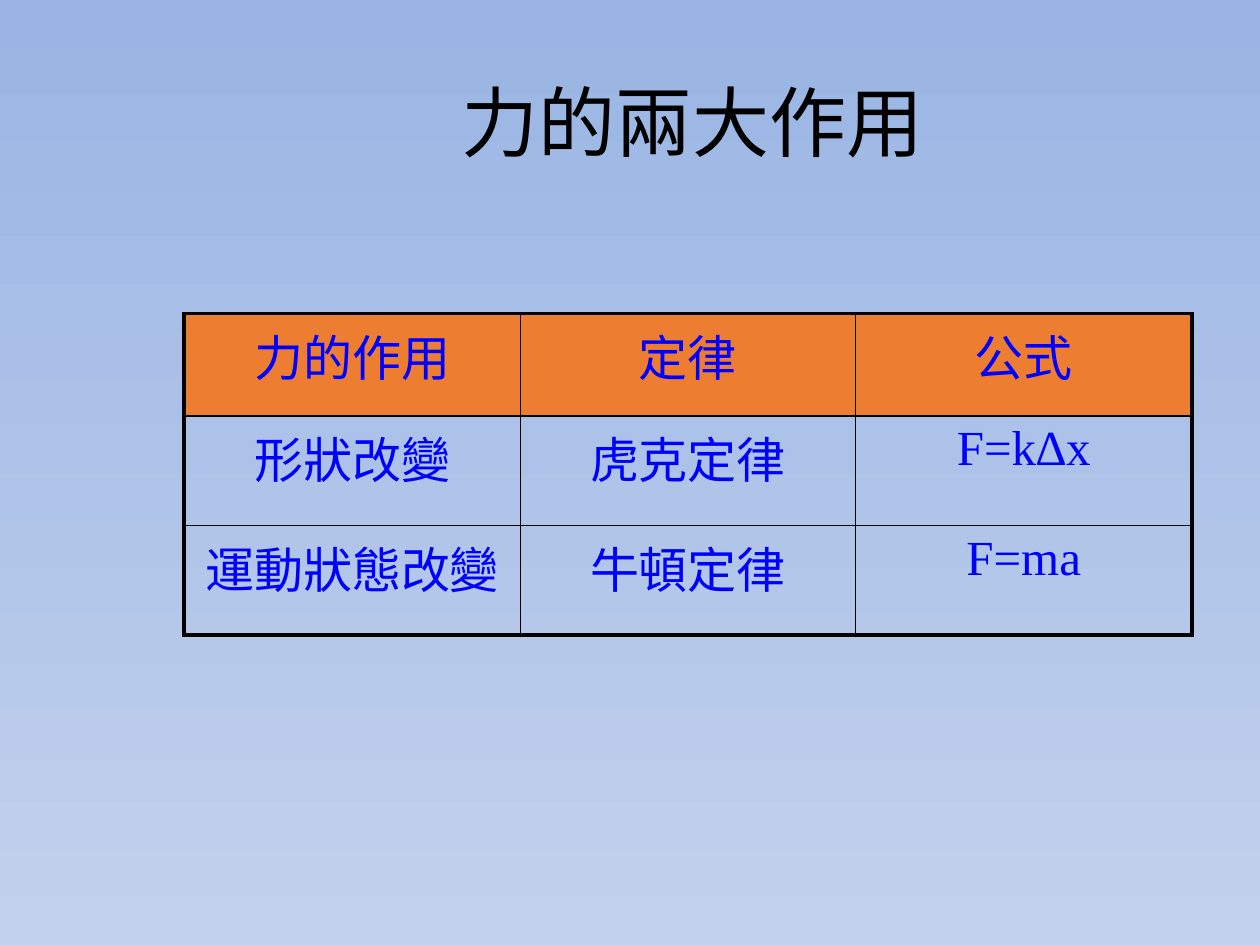
from pptx import Presentation
from pptx import util as u
from pptx.dml.color import RGBColor
from pptx.enum import text
from pptx.oxml.ns import qn
from lxml import etree

COLORS = {"top": "9AB5E4", "base": "C2D1ED", "ink": "000000",
          "word": "0000FF", "head": "ED7D31"}
ROWS = [["力的作用", "定律", "公式"],
        ["形狀改變", "虎克定律", "F=k∆x"],
        ["運動狀態改變", "牛頓定律", "F=ma"]]


def rgb(name):
    return RGBColor.from_string(COLORS[name])


class Deck:
    latin, asian = "Times New Roman", "Noto Sans CJK SC"
    thin, thick = 1, 2.25

    def __init__(self):
        self.prs = Presentation()
        self.prs.slide_width, self.prs.slide_height = u.Inches(10), u.Inches(7.5)
        self.slide = self.prs.slides.add_slide(self.prs.slide_layouts[5])

    def back(self):
        fill = self.slide.background.fill
        fill.gradient()
        fill.gradient_angle = 270
        for stop, name in zip(fill.gradient_stops, ("top", "base")):
            stop.color.rgb = rgb(name)

    def style(self, frame, size, color, latin):
        para = frame.paragraphs[0]
        para.alignment = text.PP_ALIGN.CENTER
        for run in para.runs:
            font = run.font
            font.size, font.bold, font.name = u.Pt(size), False, latin
            font.color.rgb = rgb(color)
            # East Asian typeface follows the Latin one
            face = etree.Element(qn("a:ea"), typeface=self.asian)
            font._element.find(qn("a:latin")).addnext(face)

    def title(self, words, left, top, width, height):
        box = self.slide.shapes.title
        box.left, box.top = u.Inches(left), u.Inches(top)
        box.width, box.height = u.Inches(width), u.Inches(height)
        frame = box.text_frame
        frame.text = words
        frame.vertical_anchor = text.MSO_ANCHOR.MIDDLE
        self.style(frame, 44, "ink", self.asian)

    def edge(self, cell, side, width):
        line = etree.SubElement(cell._tc.get_or_add_tcPr(), qn("a:ln" + side),
                                w=str(u.Pt(width)))
        fill = etree.SubElement(line, qn("a:solidFill"))
        etree.SubElement(fill, qn("a:srgbClr"), val=COLORS["ink"])

    def table(self, rows, left, top, widths, heights):
        grid = self.slide.shapes.add_table(
            len(rows), len(widths), u.Inches(left), u.Inches(top),
            u.Inches(sum(widths)), u.Inches(sum(heights))).table
        grid.first_row = grid.horz_banding = False
        for col, width in zip(grid.columns, widths):
            col.width = u.Inches(width)
        for row, height in zip(grid.rows, heights):
            row.height = u.Inches(height)
        for r, row in enumerate(rows):
            for c, words in enumerate(row):
                cell = grid.cell(r, c)
                cell.text_frame.text = words
                self.style(cell.text_frame, 28, "word", self.latin)
                # Thick lines only on the outer frame
                outer = {"L": c == 0, "R": c == len(row) - 1,
                         "T": r == 0, "B": r == len(rows) - 1}
                for side, rim in outer.items():
                    self.edge(cell, side, self.thick if rim else self.thin)
                if r == 0:
                    cell.fill.solid()
                    cell.fill.fore_color.rgb = rgb("head")
                else:
                    cell.fill.background()


def main():
    deck = Deck()
    deck.back()
    # Heading
    deck.title("力的兩大作用", 1.5, 0.33, 8, 1.25)
    # Effects of force, with law and formula
    deck.table(ROWS, 1.46, 2.49, [2.67, 2.66, 2.67], [0.81, 0.87, 0.87])
    deck.prs.save("out.pptx")


if __name__ == "__main__":
    main()
